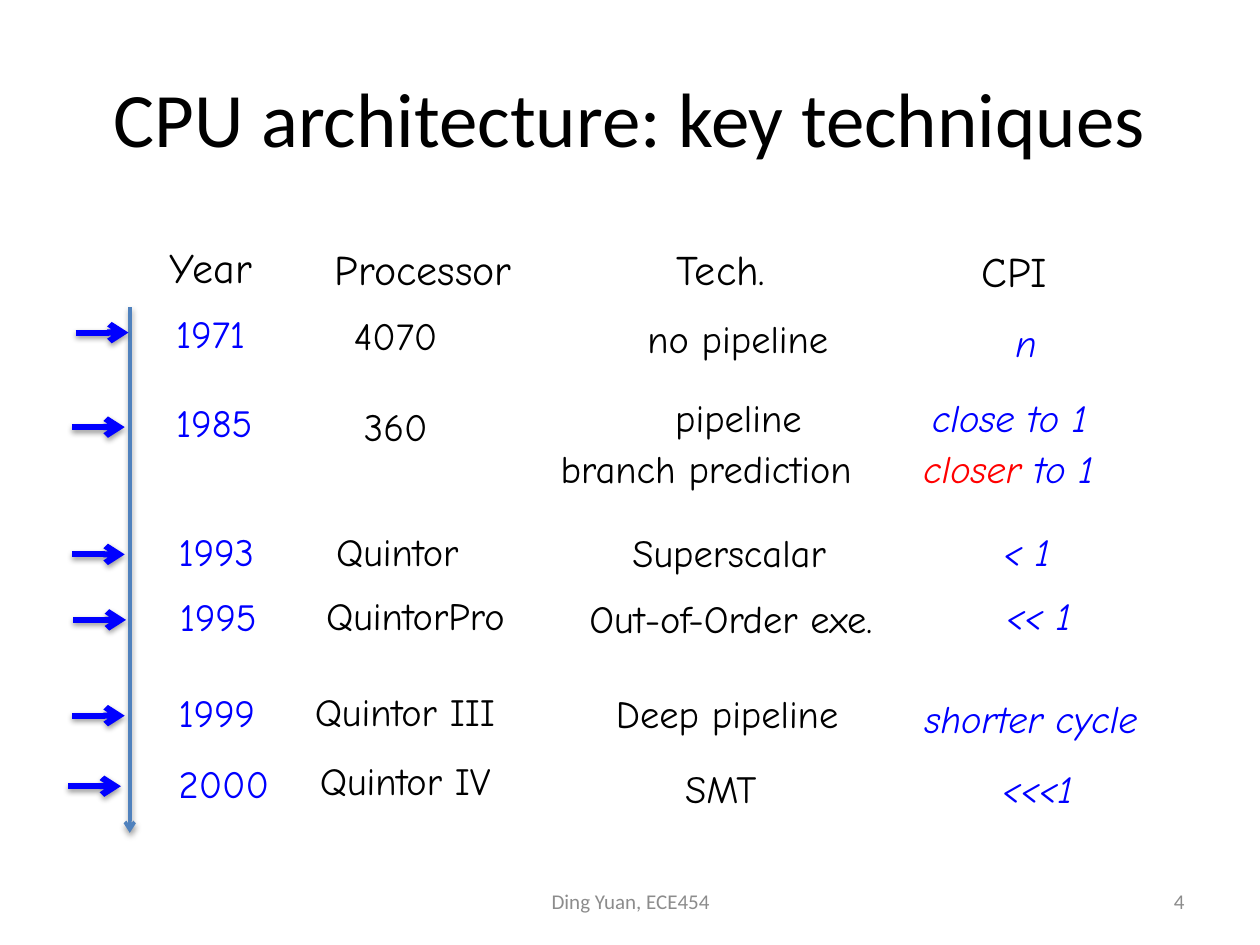
import pptx
import pptx.util
import pptx.dml.color
import pptx.enum.shapes
import pptx.enum.text
import pptx.oxml
import pptx.oxml.ns

PX = 9144  # EMU per px, 100 px to the inch
COLORS = {"black": "000000", "blue": "0000FF", "red": "FF0000",
          "gray": "8C8C8C", "axis": "4F81BD"}
ALIGN = pptx.enum.text.PP_ALIGN
ANCHOR = pptx.enum.text.MSO_ANCHOR
SHADOW = (
    f'<a:effectLst {pptx.oxml.ns.nsdecls("a")}>'
    '<a:outerShdw blurRad="40000" dist="20000" dir="5400000" rotWithShape="0">'
    '<a:srgbClr val="000000"><a:alpha val="38000"/></a:srgbClr>'
    '</a:outerShdw></a:effectLst>')

presentation = pptx.Presentation()
presentation.slide_width = 1000 * PX
presentation.slide_height = 750 * PX
slide = presentation.slides.add_slide(presentation.slide_layouts[6])


def add_text(box, runs, size, color, font="Comic Neue", align=ALIGN.LEFT,
             anchor=ANCHOR.TOP, wrap=False, italic=False):
    shape = slide.shapes.add_textbox(*(length * PX for length in box))
    frame = shape.text_frame
    frame.word_wrap = wrap
    frame.vertical_anchor = anchor
    if not wrap:
        frame.auto_size = pptx.enum.text.MSO_AUTO_SIZE.SHAPE_TO_FIT_TEXT
    paragraph = frame.paragraphs[0]
    paragraph.alignment = align
    paragraph.font.name = font
    paragraph.font.size = pptx.util.Pt(size)
    paragraph.font.italic = italic
    paragraph.font.color.rgb = pptx.dml.color.RGBColor.from_string(COLORS[color])
    for text in runs:
        paragraph.add_run().text = text
    return paragraph


def add_arrow(x1, y1, x2, y2, color, width):
    arrow = slide.shapes.add_connector(
        pptx.enum.shapes.MSO_CONNECTOR.STRAIGHT, x1 * PX, y1 * PX, x2 * PX, y2 * PX)
    arrow.line.width = pptx.util.Pt(width)
    arrow.line.color.rgb = pptx.dml.color.RGBColor.from_string(COLORS[color])
    arrow.line._get_or_add_ln().append(pptx.oxml.parse_xml(
        f'<a:tailEnd {pptx.oxml.ns.nsdecls("a")} type="arrow"/>'))
    arrow._element.spPr.append(pptx.oxml.parse_xml(SHADOW))


# Title, footer and slide number
for box, text, size, color, align in [
    ((50, 30, 900, 125), "CPU architecture: key techniques", 44, "black", ALIGN.CENTER),
    ((342, 695, 317, 40), "Ding Yuan, ECE454", 12, "gray", ALIGN.CENTER),
    ((717, 695, 233, 40), "4", 12, "gray", ALIGN.RIGHT),
]:
    add_text(box, [text], size, color, "Calibri", align, ANCHOR.MIDDLE, wrap=True)

# Time axis with one marker per year
add_arrow(103, 244, 103, 661, "axis", 2)
for x, y in [(60, 264), (57, 339), (57, 440), (58, 492), (57, 568), (54, 624)]:
    add_arrow(x, y, x + 42, y, "blue", 3.5)

# Columns: heading, colour, italic, then entries as (left, top, width, text)
columns = [
    ((125, 187, 93, "Year"), "blue", False, [
        (130, 241, 86, "1971"), (130, 312, 91, "1985"), (132, 414, 91, "1993"),
        (133, 466, 91, "1995"), (132, 542, 91, "1999"), (132, 598, 96, "2000")]),
    ((256, 188, 174, "Processor"), "black", False, [
        (271, 243, 96, "4070"), (279, 315, 77, "360"), (257, 414, 133, "Quintor"),
        (249, 465, 180, "QuintorPro"), (240, 541, 192, "Quintor III"),
        (244, 596, 179, "Quintor IV")]),
    ((527, 188, 107, "Tech."), "black", False, [
        (504, 245, 170, "no pipeline"), (526, 308, 129, "pipeline"),
        (435, 348, 275, "branch prediction"), (492, 415, 192, "Superscalar"),
        (458, 467, 291, "Out-of-Order exe."), (479, 543, 211, "Deep pipeline"),
        (534, 602, 90, "SMT")]),
    ((769, 190, 76, "CPI"), "blue", True, [
        (796, 248, 47, "n"), (730, 308, 166, "close to 1"), (787, 414, 66, "< 1"),
        (789, 465, 77, "<< 1"), (724, 547, 223, "shorter cycle"),
        (786, 602, 80, "<<<1")]),
]
for (left, top, width, heading), color, italic, entries in columns:
    add_text((left, top, width, 50), [heading], 24, "black")
    for left, top, width, text in entries:
        add_text((left, top, width, 47), [text], 22, color, italic=italic)

# Branch prediction CPI, with its first word in red
paragraph = add_text((723, 348, 181, 47), ["closer", " to 1"], 22, "blue", italic=True)
paragraph.runs[0].font.color.rgb = pptx.dml.color.RGBColor.from_string(COLORS["red"])

presentation.save("out.pptx")
